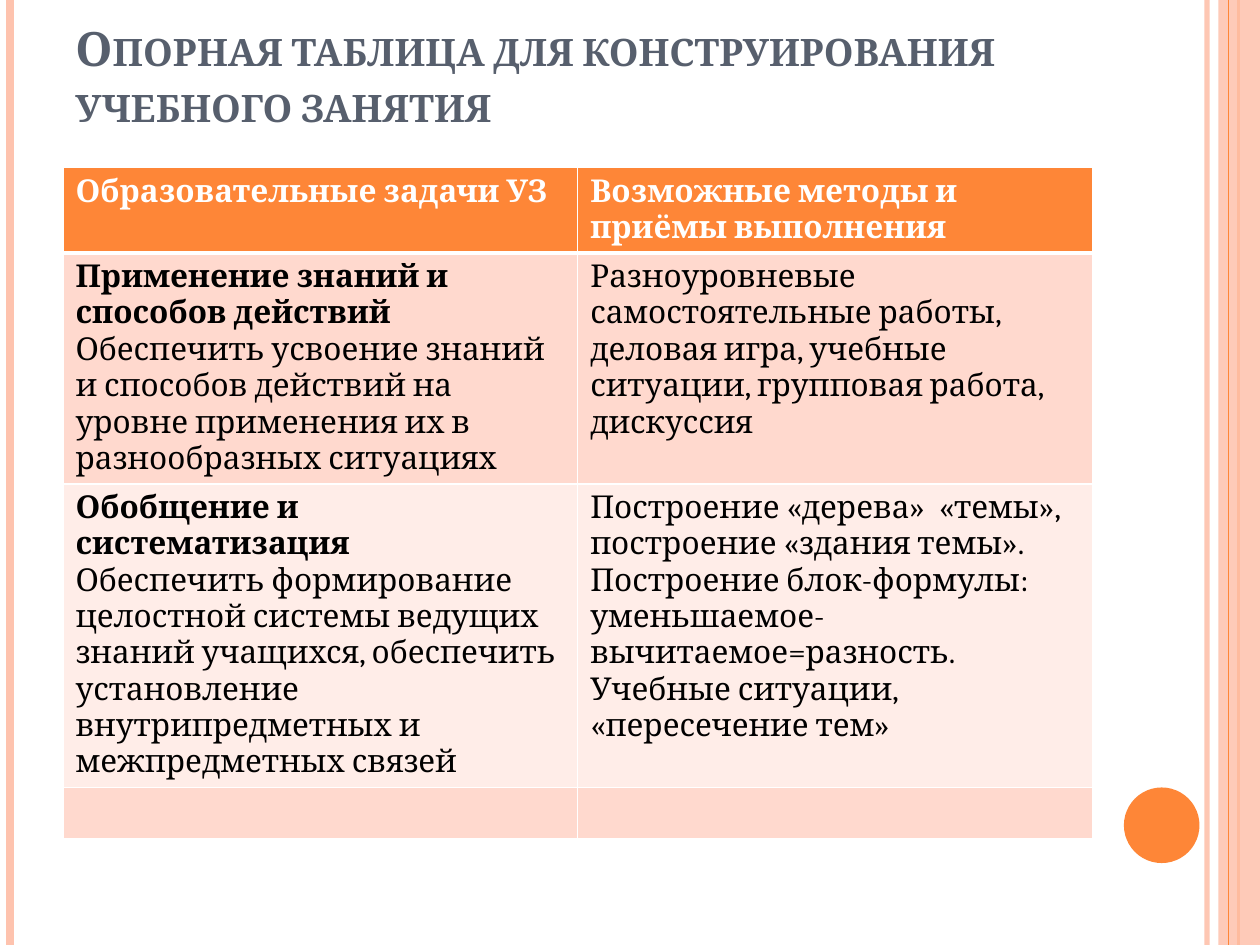
from dataclasses import dataclass

from lxml.etree import SubElement
from pptx import Presentation
from pptx.dml.color import RGBColor
from pptx.enum.shapes import MSO_CONNECTOR as Connector, MSO_SHAPE as Shape
from pptx.enum.text import MSO_ANCHOR as Anchor, MSO_AUTO_SIZE as AutoSize
from pptx.oxml.ns import qn
from pptx.util import Inches, Pt


@dataclass(frozen=True)
class Theme:
    font: str = "Cambria"
    accent: str = "FE8637"
    peach: str = "FEC3AE"
    heading: str = "575F6D"
    text: str = "000000"
    white: str = "FFFFFF"
    bands: tuple = ("FFD9CE", "FFEDE8")
    heading_size: int = 27
    table_size: int = 18


THEME = Theme()
SLIDE_HEIGHT = 7.5

STRIPES = [
    (9.58, THEME.peach, 3, 93),
    (0.08, THEME.peach, 4.5, 100),
    (9.83, THEME.accent, 1.5, 100),
]
INNER_STRIPE = (9.75, THEME.accent, 0.75, 100)

HEADING = "Опорная таблица для конструирования учебного занятия"
ROW_HEIGHTS = [0.67, 1.83, 2.4, 0.41]
LESSON_ROWS = [
    (["Образовательные задачи УЗ"], ["Возможные методы и приёмы выполнения"]),
    (
        [
            "Применение знаний и способов действий",
            "Обеспечить усвоение знаний и способов действий на уровне "
            "применения их в разнообразных ситуациях",
        ],
        [
            "Разноуровневые самостоятельные работы, деловая игра, учебные "
            "ситуации, групповая работа, дискуссия"
        ],
    ),
    (
        [
            "Обобщение и систематизация",
            "Обеспечить формирование целостной системы ведущих знаний учащихся, "
            "обеспечить установление внутрипредметных и межпредметных связей",
        ],
        [
            "Построение «дерева»  «темы», построение «здания темы». "
            "Построение блок-формулы: уменьшаемое-вычитаемое=разность. "
            "Учебные ситуации, «пересечение тем»"
        ],
    ),
    ([], []),
]


def apply_format(target, values):
    for name, value in values.items():
        setattr(target, name, value)


def paint(fill, color, opacity=100):
    fill.solid()
    fill.fore_color.rgb = RGBColor.from_string(color)
    if opacity < 100:
        shade = fill._xPr.find(".//" + qn("a:srgbClr"))
        SubElement(shade, qn("a:alpha"), val=str(opacity * 1000))


def add_run(paragraph, text, size, color, bold):
    run = paragraph.add_run()
    run.text = text
    apply_format(run.font, {"name": THEME.font, "size": Pt(size), "bold": bold})
    run.font.color.rgb = RGBColor.from_string(color)
    return run


def add_stripe(slide, x, color, width, opacity):
    stripe = slide.shapes.add_connector(
        Connector.STRAIGHT, Inches(x), 0, Inches(x), Inches(SLIDE_HEIGHT)
    )
    stripe.line.width = Pt(width)
    paint(stripe.line.fill, color, opacity)
    SubElement(stripe._element.spPr, qn("a:effectLst"))


def add_decoration(slide, kind, box, color, opacity=100):
    decoration = slide.shapes.add_shape(kind, *map(Inches, box))
    decoration.shadow.inherit = False
    paint(decoration.fill, color, opacity)
    decoration.line.fill.background()


def add_heading(slide):
    heading = slide.shapes.add_textbox(*map(Inches, (0.5, 0.3, 8.17, 1.25)))
    frame = heading.text_frame
    apply_format(frame, {
        "word_wrap": True,
        "auto_size": AutoSize.NONE,
        "vertical_anchor": Anchor.BOTTOM,
        "margin_bottom": Inches(0.5),
    })
    run = add_run(
        frame.paragraphs[0], HEADING, THEME.heading_size, THEME.heading, True
    )
    run.font._element.set("cap", "small")


def set_borders(cell, widths):
    properties = cell._tc.get_or_add_tcPr()
    for side, width in widths.items():
        border = SubElement(properties, qn(f"a:ln{side}"), w=str(Pt(width)))
        solid = SubElement(border, qn("a:solidFill"))
        SubElement(solid, qn("a:srgbClr"), val=THEME.white)


def fill_cell(cell, paragraphs, row):
    is_header = row == 0
    set_borders(cell, {
        "L": 1, "R": 1, "T": 3 if row == 1 else 1, "B": 3 if is_header else 1
    })
    paint(cell.fill, THEME.accent if is_header else THEME.bands[(row - 1) % 2])
    for index, text in enumerate(paragraphs):
        frame = cell.text_frame
        paragraph = frame.add_paragraph() if index else frame.paragraphs[0]
        leads_task = index == 0 and len(paragraphs) > 1
        color = THEME.white if is_header else THEME.text
        add_run(paragraph, text, THEME.table_size, color, is_header or leads_task)


def add_lesson_table(slide):
    box = map(Inches, (0.5, 1.33, 8.17, sum(ROW_HEIGHTS)))
    table = slide.shapes.add_table(len(LESSON_ROWS), 2, *box).table
    for row, (height, contents) in enumerate(zip(ROW_HEIGHTS, LESSON_ROWS)):
        table.rows[row].height = Inches(height)
        for column, paragraphs in enumerate(contents):
            fill_cell(table.cell(row, column), paragraphs, row)


def main():
    deck = Presentation()
    apply_format(deck, {
        "slide_width": Inches(10), "slide_height": Inches(SLIDE_HEIGHT)
    })
    slide = deck.slides.add_slide(deck.slide_layouts[6])
    for stripe in STRIPES:
        add_stripe(slide, *stripe)
    add_decoration(
        slide, Shape.RECTANGLE, (9.67, 0, 0.33, SLIDE_HEIGHT), THEME.peach, 87
    )
    add_stripe(slide, *INNER_STRIPE)
    add_decoration(slide, Shape.OVAL, (8.92, 6.25, 0.6, 0.6), THEME.accent)
    add_heading(slide)
    add_lesson_table(slide)
    deck.save("out.pptx")


if __name__ == "__main__":
    main()
